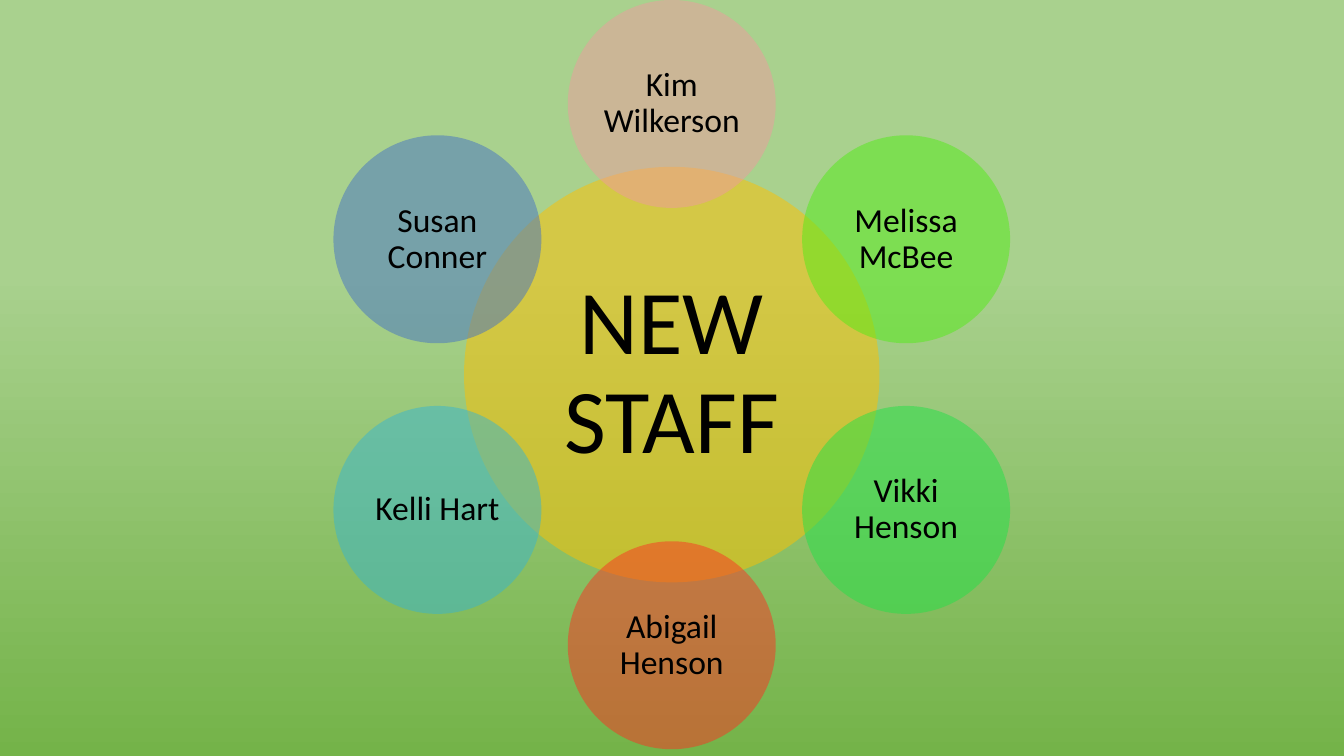
import math
from dataclasses import dataclass

import pptx
import pptx.dml.color
import pptx.enum.shapes
import pptx.enum.text
import pptx.oxml
import pptx.oxml.ns
import pptx.slide
import pptx.util

Cm = pptx.util.Cm
RGBColor = pptx.dml.color.RGBColor

MEADOW = RGBColor(0x74, 0xB3, 0x49)
PALE_GREEN = RGBColor(0xA9, 0xD1, 0x8E)
GOLD = RGBColor(0xFF, 0xC0, 0x00)
PINK = RGBColor(0xEE, 0x9C, 0x9E)
LIME = RGBColor(0x53, 0xEB, 0x17)
GREEN = RGBColor(0x23, 0xE1, 0x48)
RED = RGBColor(0xFC, 0x33, 0x24)
TEAL = RGBColor(0x39, 0xB6, 0xCE)
BLUE = RGBColor(0x44, 0x72, 0xC4)
BLACK = RGBColor(0x00, 0x00, 0x00)

CENTER_X, CENTER_Y = 16.93, 9.44
ORBIT = 6.82
OPACITY_PERCENT = 50


@dataclass(frozen=True)
class CircleStyle:
    diameter: float
    inset: float
    text_size: int


@dataclass(frozen=True)
class Member:
    name: str
    color: RGBColor


HUB = CircleStyle(10.47, 0.23, 65)
SATELLITE = CircleStyle(5.24, 0.08, 24)

# Clockwise from the top
STAFF = [
    Member("Kim Wilkerson", PINK),
    Member("Melissa McBee", LIME),
    Member("Vikki Henson", GREEN),
    Member("Abigail Henson", RED),
    Member("Kelli Hart", TEAL),
    Member("Susan Conner", BLUE),
]


def paint_background(slide: pptx.slide.Slide) -> None:
    fill = slide.background.fill
    fill.gradient()
    fill.gradient_angle = 90
    for stop, position, color in zip(
        fill.gradient_stops, (0, 0.64), (MEADOW, PALE_GREEN)
    ):
        stop.position = position
        stop.color.rgb = color


def add_circle(slide: pptx.slide.Slide, label: str, color: RGBColor,
               x: float, y: float, style: CircleStyle) -> None:
    """Draw a translucent labelled circle centred on x, y (in cm)."""
    radius = style.diameter / 2
    circle = slide.shapes.add_shape(
        pptx.enum.shapes.MSO_SHAPE.OVAL,
        Cm(x - radius), Cm(y - radius), Cm(style.diameter), Cm(style.diameter),
    )
    circle.shadow.inherit = False
    circle.line.fill.background()
    circle.fill.solid()
    circle.fill.fore_color.rgb = color
    srgb = circle.fill._xPr.find(".//" + pptx.oxml.ns.qn("a:srgbClr"))
    alpha = pptx.oxml.parse_xml(
        f'<a:alpha {pptx.oxml.ns.nsdecls("a")} val="{OPACITY_PERCENT * 1000}"/>'
    )
    srgb.append(alpha)

    frame = circle.text_frame
    frame_format = {
        "word_wrap": True,
        "vertical_anchor": pptx.enum.text.MSO_ANCHOR.MIDDLE,
        **{f"margin_{side}": Cm(style.inset)
           for side in ("left", "top", "right", "bottom")},
    }
    for attribute, value in frame_format.items():
        setattr(frame, attribute, value)

    paragraph = frame.paragraphs[0]
    paragraph.alignment = pptx.enum.text.PP_ALIGN.CENTER
    paragraph.line_spacing = 0.9
    run = paragraph.add_run()
    run.text = label
    font_format = {"name": "Calibri", "size": pptx.util.Pt(style.text_size)}
    for attribute, value in font_format.items():
        setattr(run.font, attribute, value)
    run.font.color.rgb = BLACK


def main() -> None:
    deck = pptx.Presentation()
    deck.slide_width, deck.slide_height = Cm(33.87), Cm(19.05)
    slide = deck.slides.add_slide(deck.slide_layouts[6])
    paint_background(slide)
    add_circle(slide, "NEW STAFF", GOLD, CENTER_X, CENTER_Y, HUB)
    for position, member in enumerate(STAFF):
        angle = math.tau * position / len(STAFF)
        add_circle(
            slide, member.name, member.color,
            CENTER_X + ORBIT * math.sin(angle),
            CENTER_Y - ORBIT * math.cos(angle),
            SATELLITE,
        )
    deck.save("out.pptx")


if __name__ == "__main__":
    main()
